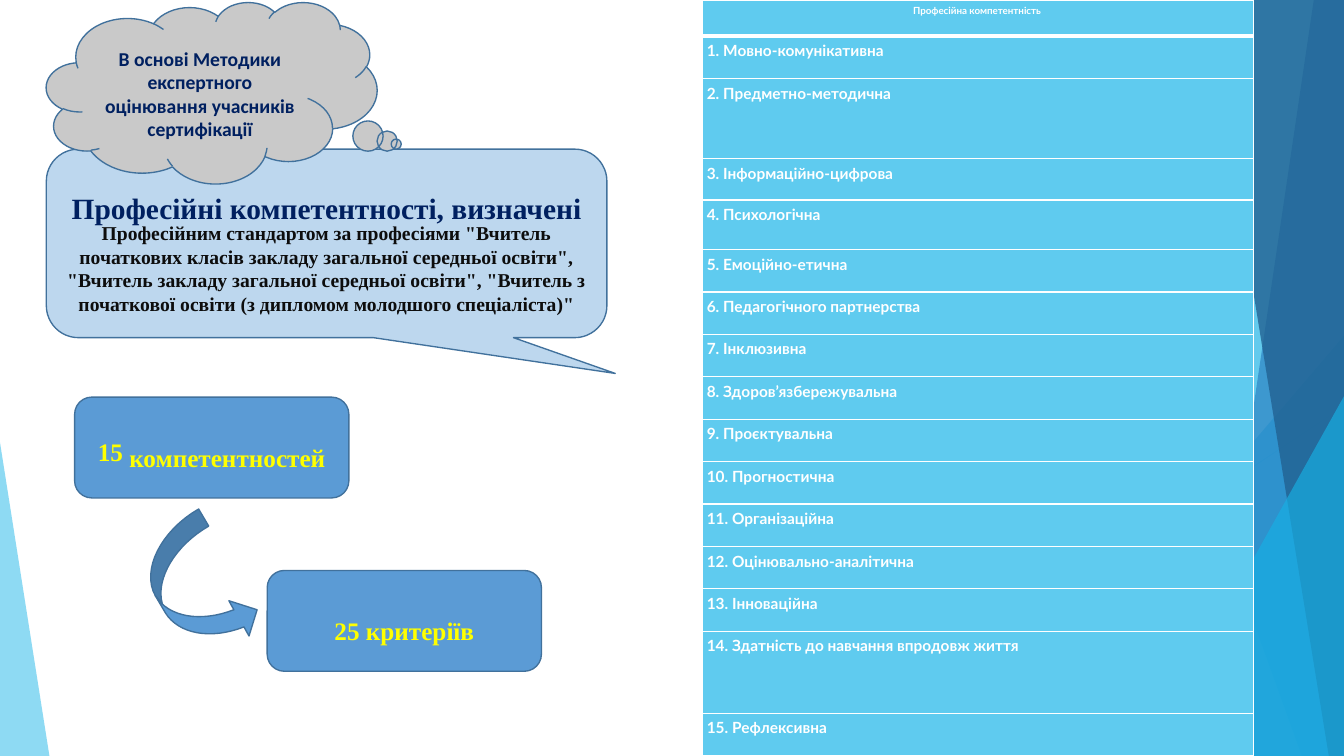
from lxml.etree import SubElement
from pptx import Presentation
from pptx.dml.color import RGBColor
from pptx.enum.shapes import MSO_CONNECTOR, MSO_SHAPE
from pptx.enum.text import MSO_ANCHOR, PP_ALIGN
from pptx.oxml.ns import qn
from pptx.util import Inches, Pt

SERIF, SANS, TABLE_FONT = "Times New Roman", "Calibri", "Lato"
NAVY, INK, YELLOW, WHITE = "002060", "0D0D0D", "FFFF00", "FFFFFF"
SKY, AZURE, BLUE, GREY, EDGE = "5FCBEF", "17B0E4", "5B9BD5", "C9C9C9", "41719C"

COMPETENCES = [
    ("Мовно-комунікативна", 0.42),
    ("Предметно-методична", 0.79),
    ("Інформаційно-цифрова", 0.41),
    ("Психологічна", 0.49),
    ("Емоційно-етична", 0.42),
    ("Педагогічного партнерства", 0.42),
    ("Інклюзивна", 0.42),
    ("Здоров’язбережувальна", 0.42),
    ("Проєктувальна", 0.42),
    ("Прогностична", 0.42),
    ("Організаційна", 0.42),
    ("Оцінювально-аналітична", 0.42),
    ("Інноваційна", 0.42),
    ("Здатність до навчання впродовж життя", 0.81),
    ("Рефлексивна", 0.42),
]


def rgb(color):
    return RGBColor.from_string(color)


def set_alpha(fill_parent, alpha):
    clr = next(fill_parent.iter(qn("a:srgbClr")))
    SubElement(clr, qn("a:alpha")).set("val", str(alpha * 1000))


def paint(sp, fill, alpha=100, line=None):
    sp.shadow.inherit = False
    if fill:
        sp.fill.solid()
        sp.fill.fore_color.rgb = rgb(fill)
    else:
        sp.fill.background()
    if alpha < 100:
        set_alpha(sp._element.spPr, alpha)
    if line:
        sp.line.color.rgb = rgb(line)
        sp.line.width = Pt(0.96)
    else:
        sp.line.fill.background()


def add_preset(s, kind, box, fill, adjustments=(), **look):
    sp = s.shapes.add_shape(kind, *map(Inches, box))
    for i, value in enumerate(adjustments):
        sp.adjustments[i] = value
    paint(sp, fill, **look)
    return sp


def curve_points(start, curve, steps=16):
    xs, ys = (start[0], *curve[::2]), (start[1], *curve[1::2])
    for i in range(1, steps + 1):
        t = i / steps
        weights = ((1 - t) ** 3, 3 * t * (1 - t) ** 2, 3 * t * t * (1 - t), t ** 3)
        yield tuple(sum(w * v for w, v in zip(weights, vs)) for vs in (xs, ys))


def add_outline(s, segments, fill, **look):
    points = [segments[0]]
    for segment in segments[1:]:
        points += curve_points(points[-1], segment) if len(segment) == 6 else [segment]
    points = [(Inches(x), Inches(y)) for x, y in points]
    builder = s.shapes.build_freeform(*points[0])
    builder.add_line_segments(points[1:], close=True)
    paint(builder.convert_to_shape(), fill, **look)


def add_ray(s, x1, y1, x2, y2):
    ray = s.shapes.add_connector(MSO_CONNECTOR.STRAIGHT, *map(Inches, (x1, y1, x2, y2)))
    ray.line.color.rgb = rgb(SKY)
    ray.line.width = Pt(0.75)
    set_alpha(ray._element.spPr, 70)
    SubElement(ray._element.spPr, qn("a:effectLst"))


def write(p, text, font, size, color, align=PP_ALIGN.CENTER, spacing=None):
    p.alignment = align
    p.line_spacing = spacing
    r = p.add_run()
    r.text = text
    r.font.name, r.font.size, r.font.bold = font, Pt(size), True
    r.font.color.rgb = rgb(color)


def set_frame(sp, left=0, top=0, anchor=MSO_ANCHOR.MIDDLE):
    tf = sp.text_frame
    tf.word_wrap = True
    tf.vertical_anchor = anchor
    tf.margin_left, tf.margin_top = Inches(left), Inches(top)
    tf.margin_right = tf.margin_bottom = 0
    return tf


def write_lines(tf, lines, **fmt):
    for i, text in enumerate(lines):
        p = tf.add_paragraph() if i or tf.paragraphs[0].runs else tf.paragraphs[0]
        write(p, text, **fmt)


def add_backdrop(s):
    add_ray(s, 10.25, 0, 11.58, 7.5)
    add_ray(s, 13.33, 4.03, 8.12, 7.5)

    def band(top, bottom, fill, alpha):
        corners = [(top, 0), (13.33, 0), (13.33, 7.5), (bottom, 7.5)]
        add_outline(s, corners, fill, alpha=alpha)

    def wedge(box, apex, fill, alpha):
        add_preset(s, MSO_SHAPE.ISOSCELES_TRIANGLE, box, fill, [apex], alpha=alpha)

    band(12.28, 10.04, SKY, 36)
    band(10.5, 11.83, SKY, 20)
    wedge((9.77, 3.33, 3.56, 4.17), 1, AZURE, 66)
    band(10.21, 12.91, AZURE, 50)
    band(13.03, 11.92, "2E83C3", 70)
    band(11.96, 13.18, "226292", 80)
    wedge((11.34, 3.93, 1.99, 3.57), 1, AZURE, 66)
    wedge((0, 4.39, 0.49, 3.11), 0, SKY, 70)


def add_callout(s):
    sp = add_preset(s, MSO_SHAPE.ROUNDED_RECTANGULAR_CALLOUT, (0.46, 1.48, 5.56, 1.87),
                    "BDD7EE", (0.515, 0.69, 0.17), line=EDGE)
    tf = set_frame(sp, top=0.33, anchor=MSO_ANCHOR.TOP)
    write_lines(tf, ["Професійні компетентності, визначені"],
                font=SERIF, size=21, color=NAVY, spacing=Pt(24))
    body = dict(font=SERIF, size=14, color=INK)
    write_lines(tf, ["Професійним стандартом за професіями \"Вчитель"], spacing=Pt(13.7), **body)
    write_lines(tf, [
        "початкових класів закладу загальної середньої освіти\",",
        "\"Вчитель закладу загальної середньої освіти\", \"Вчитель з",
        "початкової освіти (з дипломом молодшого спеціаліста)\"",
    ], spacing=Pt(16.9), **body)


def add_cloud(s):
    sp = add_preset(s, MSO_SHAPE.CLOUD, (0.46, 0.02, 3.28, 1.8), GREY, line=EDGE)
    write_lines(set_frame(sp, top=0.1), [
        "В основі Методики", "експертного", "оцінювання учасників", "сертифікації",
    ], font=SANS, size=14, color=NAVY)
    for fill, line in ((GREY, None), (None, EDGE)):
        for left, top, size in ((3.88, 1.38, 0.1), (3.74, 1.3, 0.2), (3.5, 1.2, 0.3)):
            add_preset(s, MSO_SHAPE.OVAL, (left, top, size, size), fill, line=line)


def add_count(s, left, top, text, indent=0):
    sp = add_preset(s, MSO_SHAPE.ROUNDED_RECTANGLE, (left, top, 2.72, 1), BLUE,
                    [0.17], line=EDGE)
    write_lines(set_frame(sp, indent, 0.19), [text], font=SERIF, size=18, color=YELLOW)


def add_raised_number(s, left, top, text):
    box = s.shapes.add_textbox(*map(Inches, (left, top, 0.33, 0.3)))
    write_lines(set_frame(box, anchor=MSO_ANCHOR.TOP), [text], font=SERIF, size=18,
                color=YELLOW, align=PP_ALIGN.LEFT)


def add_curved_arrow(s):
    add_outline(s, [(1.54, 5.91), (1.4, 5.66, 1.59, 5.27, 1.97, 5.05), (2.07, 5.22),
                    (1.74, 5.41, 1.54, 5.74, 1.61, 5.99)], "497DAB", line=EDGE)
    add_outline(s, [(1.54, 5.91), (1.67, 6.12, 1.98, 6.18, 2.32, 6.05), (2.27, 5.96),
                    (2.55, 6.05), (2.47, 6.31), (2.42, 6.22),
                    (2.09, 6.35, 1.77, 6.29, 1.64, 6.08)], BLUE, line=EDGE)


def set_borders(cell, bottom):
    tcPr = cell._tc.get_or_add_tcPr()
    for i, (side, width) in enumerate((("L", 1), ("R", 1), ("T", 1), ("B", bottom))):
        ln = tcPr.makeelement(qn(f"a:ln{side}"), {"w": str(Pt(width))})
        SubElement(SubElement(ln, qn("a:solidFill")), qn("a:srgbClr")).set("val", WHITE)
        tcPr.insert(i, ln)


def add_competence_table(s):
    rows = [("Професійна компетентність", 0.36)]
    rows += [(f"{n}. {name}", h) for n, (name, h) in enumerate(COMPETENCES, 1)]
    stretch = 7.5 / sum(h for _, h in rows)
    frame = s.shapes.add_table(len(rows), 1, *map(Inches, (6.97, 0, 5.46, 7.5)))
    for i, (text, height) in enumerate(rows):
        frame.table.rows[i].height = Inches(height * stretch)
        cell = frame.table.cell(i, 0)
        cell.fill.solid()
        cell.fill.fore_color.rgb = rgb(SKY)
        cell.margin_left = cell.margin_top = Inches(0.04)
        cell.margin_right, cell.margin_bottom = Inches(0.06), 0
        set_borders(cell, 1 if i else 3)
        write(cell.text_frame.paragraphs[0], text, TABLE_FONT, 11 if i else 7, WHITE,
              PP_ALIGN.LEFT if i else PP_ALIGN.CENTER, 1.07)


def main():
    prs = Presentation()
    prs.slide_width, prs.slide_height = Inches(13.33), Inches(7.5)
    s = prs.slides.add_slide(prs.slide_layouts[6])
    add_backdrop(s)
    add_callout(s)
    add_cloud(s)
    add_count(s, 0.74, 3.94, "компетентностей", indent=0.31)
    add_raised_number(s, 0.97, 4.33, "15")
    add_curved_arrow(s)
    add_count(s, 2.65, 5.66, "25 критеріїв")
    add_competence_table(s)
    prs.save("out.pptx")


if __name__ == "__main__":
    main()
